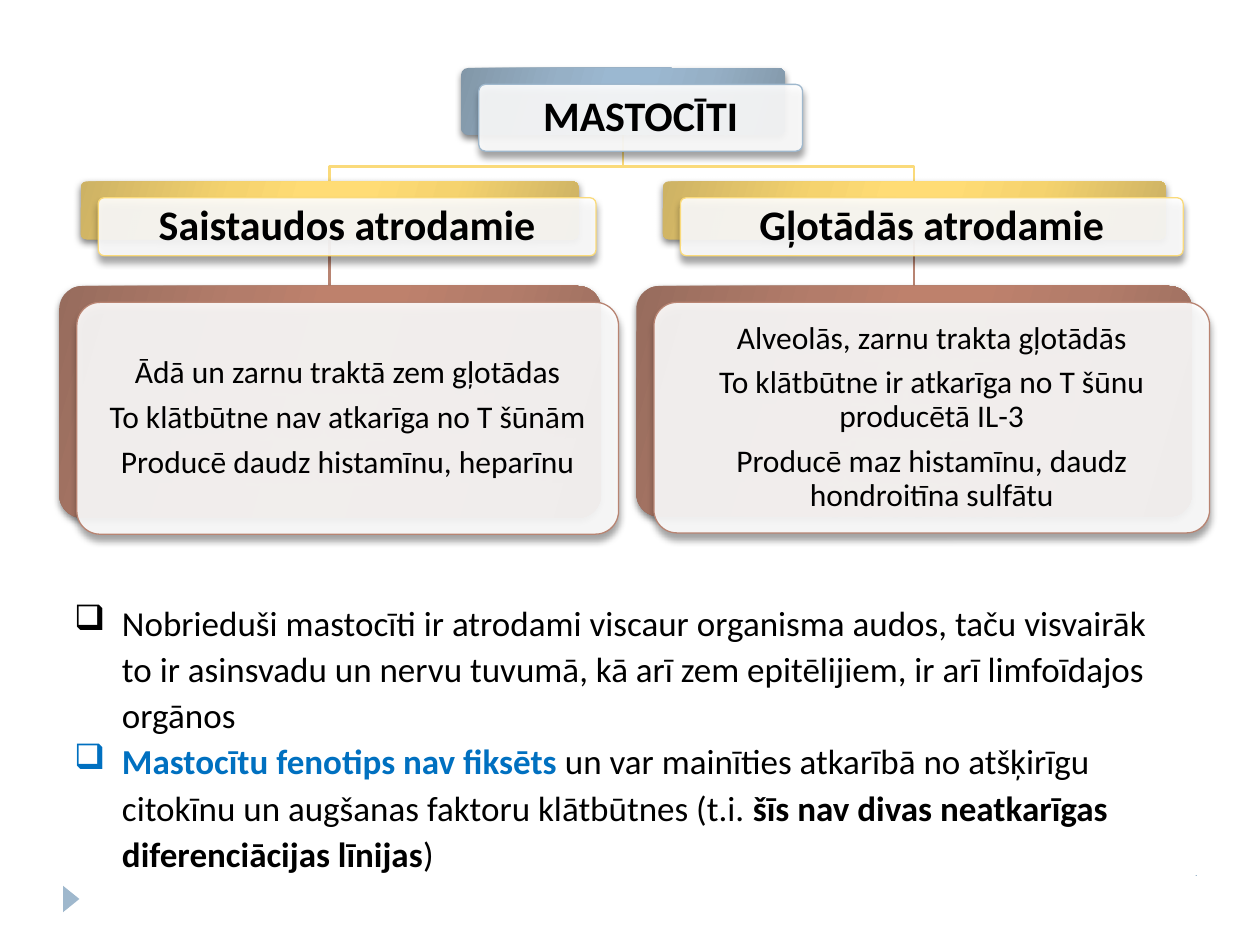
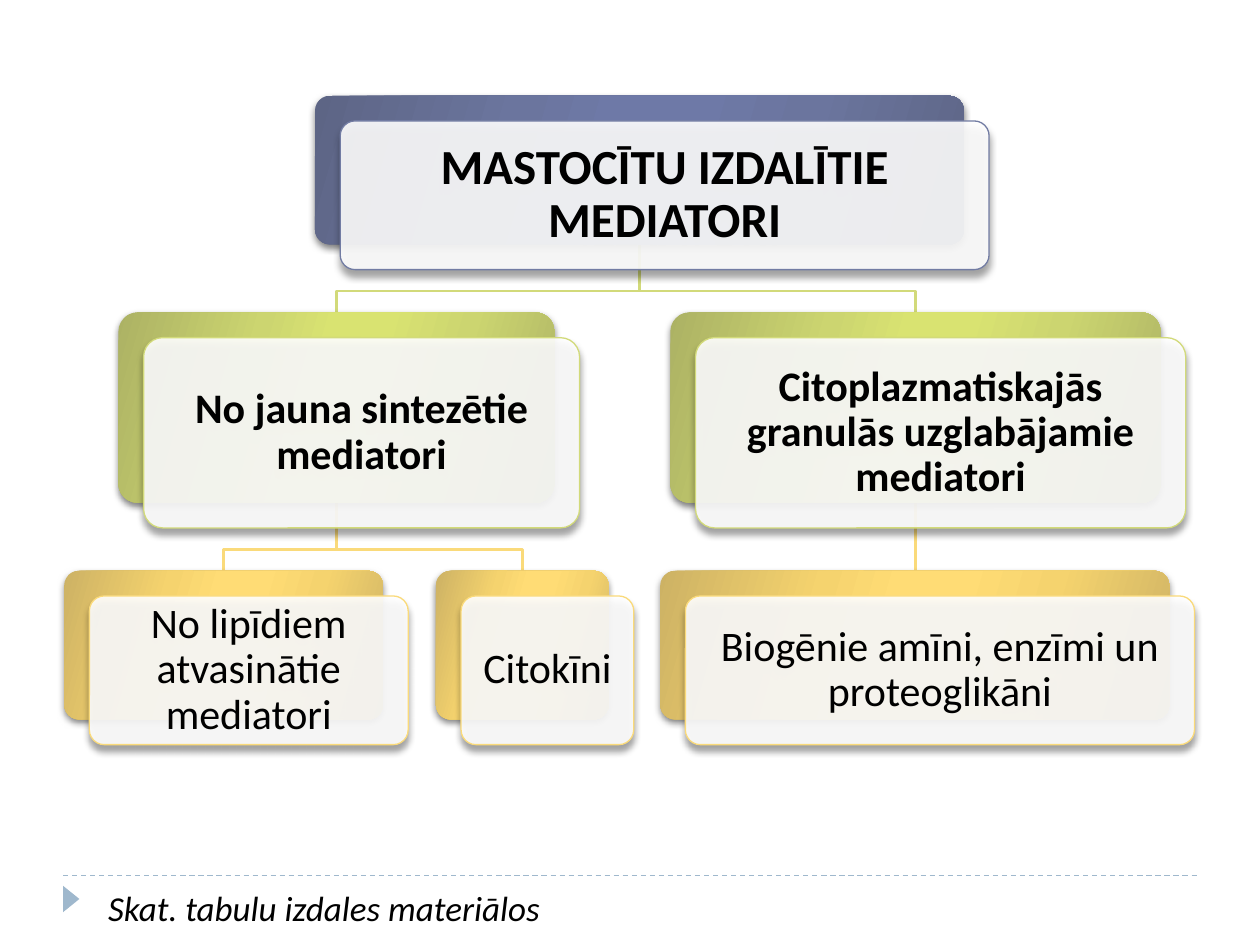
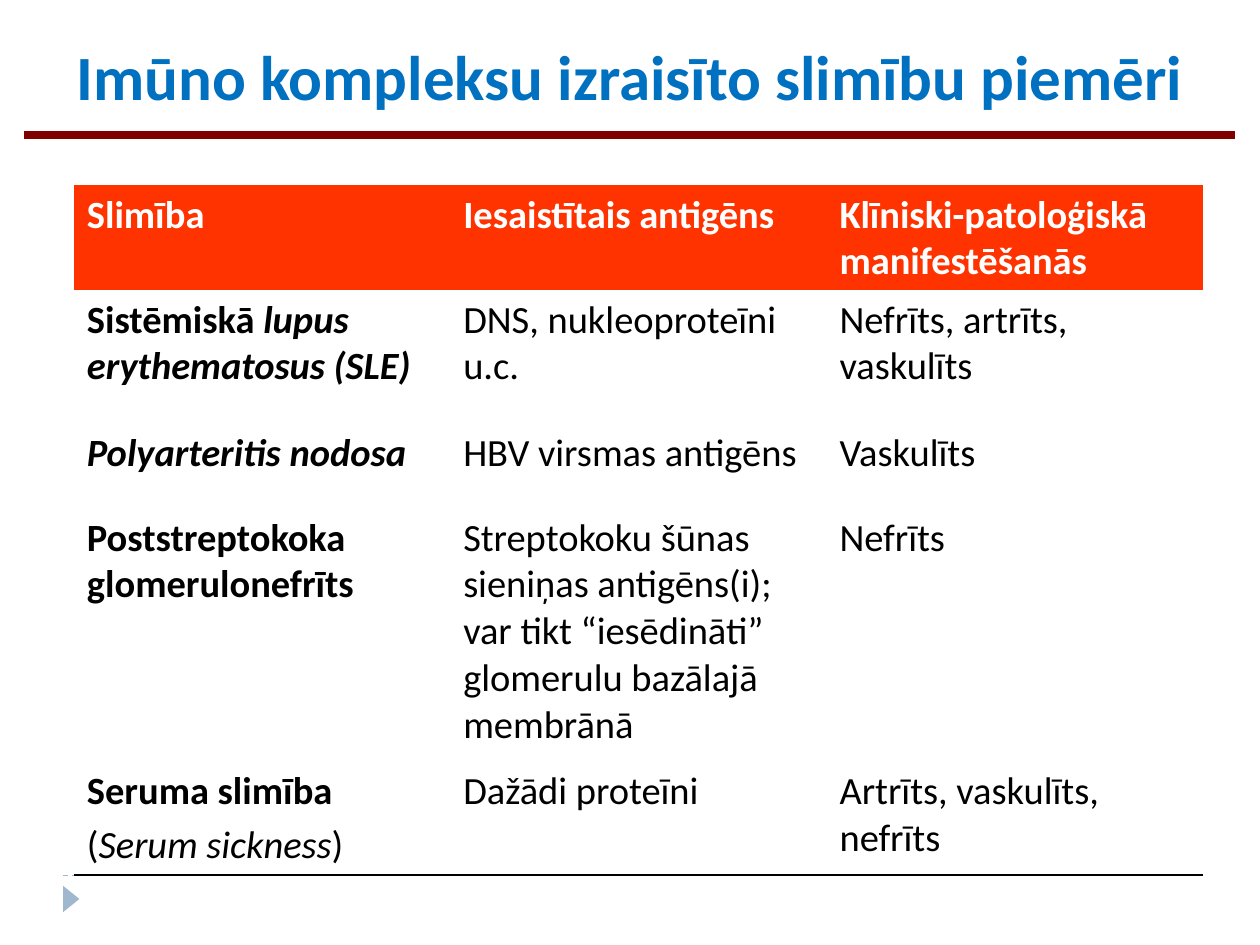
from collections import namedtuple

from lxml import etree
from pptx import Presentation
from pptx import util as u
from pptx.dml.color import RGBColor
from pptx.enum import dml, shapes, text
from pptx.oxml import ns

# Shared look
FONT = "Calibri"
BLACK = RGBColor(0x00, 0x00, 0x00)
WHITE = RGBColor(0xFF, 0xFF, 0xFF)
BLUE = RGBColor(0x00, 0x70, 0xC0)
FOOTER_BLUE = RGBColor(0x9F, 0xB8, 0xCD)
MAROON = RGBColor(0x80, 0x00, 0x00)
HEADER_RED = RGBColor(0xFF, 0x33, 0x00)
NO_GRID_STYLE = "{2D5ABB26-0587-4C30-8999-92F81FD0307C}"

# Card colours: outline, then gradient from the edge to the core
Palette = namedtuple("Palette", "line edge mid core")


def palette(*codes):
    return Palette(*map(RGBColor.from_string, codes))


STEEL = palette("9FB8CD", "8297A8", "96B0C6", "9BB8D1")
YELLOW = palette("FADA7A", "CDB264", "F5D36E", "FFDC75")
BROWN = palette("B88472", "976C5D", "B37C6A", "BE816C")
INDIGO = palette("727CA3", "5D6585", "6B759E", "6E79A7")
GREEN = palette("D2DA7A", "ACB264", "CCD570", "D9E371")

# A box of a tree; box is left, top, width, height of its back plate
Node = namedtuple("Node", "box palette size bold lines children", defaults=[()])
# Offset of the front plate, text inset, distance of the bend above a child
TreeStyle = namedtuple("TreeStyle", "dx dy inset bend")


def inches(*values):
    return [u.Inches(v) for v in values]


def sub(parent, tag, **attrs):
    return etree.SubElement(parent, ns.qn(tag), {k: str(v) for k, v in attrs.items()})


def add_color(parent, color, alpha=None):
    clr = sub(parent, "a:srgbClr", val=color)
    if alpha is not None:
        sub(clr, "a:alpha", val=alpha * 1000)


# Text
def write(tf, paras, size, color=BLACK, align=None, spacing=None, before=0, after=0):
    """Each paragraph is a list of (text, style[, colour]); style holds b and i."""
    tf.word_wrap = True
    for n, runs in enumerate(paras):
        p = tf.paragraphs[0] if n == 0 else tf.add_paragraph()
        p.alignment = align
        if spacing:
            p.line_spacing = spacing
        if before and n:
            p.space_before = u.Pt(before)
        if after:
            p.space_after = u.Pt(after)
        for content, style, *own_color in runs:
            r = p.add_run()
            r.text = content
            r.font.name, r.font.size = FONT, u.Pt(size)
            r.font.bold, r.font.italic = "b" in style, "i" in style
            r.font.color.rgb = own_color[0] if own_color else color


def add_text(s, box, paras, size, **options):
    tb = s.shapes.add_textbox(*inches(*box))
    write(tb.text_frame, paras, size, **options)
    return tb


def hang(p, left, hanging, bullet=None):
    pPr = p._p.get_or_add_pPr()
    pPr.set("marL", str(u.Inches(left)))
    pPr.set("indent", str(-u.Inches(hanging)))
    if bullet:
        sub(pPr, "a:buChar", char=bullet)


# Lines and shapes
def add_line(s, start, end, color, width, dash=None):
    line = s.shapes.add_connector(
        shapes.MSO_CONNECTOR.STRAIGHT, *inches(*start, *end))
    line.line.color.rgb, line.line.width = color, u.Pt(width)
    if dash:
        line.line.dash_style = dash
    sub(line._element.spPr, "a:effectLst")


def add_shape(s, kind, box, fill=None):
    sp = s.shapes.add_shape(kind, *inches(*box))
    sp.shadow.inherit = False
    sp.line.fill.background()
    if fill is not None:
        sp.fill.solid()
        sp.fill.fore_color.rgb = fill
    return sp


def add_footer(s):
    add_line(s, (0.5, 6.95), (9.5, 6.95), FOOTER_BLUE, 0.75, dml.MSO_LINE.DASH)
    marker = add_shape(s, shapes.MSO_SHAPE.ISOSCELES_TRIANGLE,
                       (0.46, 7.07, 0.21, 0.13), FOOTER_BLUE)
    marker.rotation = 90


# Tree of cards
def add_plate(s, box, shadow_alpha, shadow_dist, fill=None):
    sp = add_shape(s, shapes.MSO_SHAPE.ROUNDED_RECTANGLE, box, fill)
    sp.adjustments[0] = 0.1
    effects = sp._element.spPr.find(ns.qn("a:effectLst"))
    shadow = sub(effects, "a:outerShdw", blurRad=u.Pt(4), dist=u.Pt(shadow_dist),
                 dir=90 * 60000, rotWithShape=0)
    add_color(shadow, BLACK, shadow_alpha)
    return sp


def fill_gradient(sp, pal):
    sp.fill.gradient()
    grad = sp._element.spPr.find(ns.qn("a:gradFill"))
    for child in list(grad):
        grad.remove(child)
    stops = sub(grad, "a:gsLst")
    for pos, color in ((0, pal.edge), (30, pal.mid), (45, pal.core),
                       (55, pal.core), (73, pal.mid), (100, pal.edge)):
        add_color(sub(stops, "a:gs", pos=pos * 1000), color)
    sub(grad, "a:lin", ang=16 * 60000, scaled=0)


def add_card(s, node, style):
    left, top, width, height = node.box
    fill_gradient(add_plate(s, node.box, 50, 2), node.palette)

    front = add_plate(s, (left + style.dx, top + style.dy, width, height), 40, 3.4, WHITE)
    sub(front._element.spPr.find(".//" + ns.qn("a:srgbClr")), "a:alpha", val=90000)
    front.line.color.rgb, front.line.width = node.palette.line, u.Pt(0.75)

    tf = front.text_frame
    inset = u.Inches(style.inset if node.size > 18 else 0.07)
    tf.margin_left = tf.margin_right = tf.margin_top = tf.margin_bottom = inset
    tf.vertical_anchor = text.MSO_ANCHOR.MIDDLE
    write(tf, [[(line, "b" if node.bold else "")] for line in node.lines], node.size,
          align=text.PP_ALIGN.CENTER, spacing=0.9,
          after=6 if len(node.lines) > 1 else 0)


def add_link(s, parent, child, style):
    x1, y1 = parent.box[0] + parent.box[2] / 2, parent.box[1] + parent.box[3]
    x2, y2 = child.box[0] + child.box[2] / 2, child.box[1]
    color = child.palette.line
    if abs(x1 - x2) < 0.02:
        add_line(s, (x1, y1), (x1, y2), color, 1.5)
        return
    bend = y2 - style.bend
    builder = s.shapes.build_freeform(*inches(x1, y1))
    builder.add_line_segments(
        [inches(*pt) for pt in ((x1, bend), (x2, bend), (x2, y2))], close=False)
    sp = builder.convert_to_shape()
    sp.fill.background()
    sp.line.color.rgb, sp.line.width = color, u.Pt(1.5)
    sp.shadow.inherit = False


def walk(node):
    yield node
    for child in node.children:
        yield from walk(child)


def add_tree(s, root, style):
    for node in walk(root):
        for child in node.children:
            add_link(s, node, child, style)
    for node in walk(root):
        add_card(s, node, style)


# Table
def add_bottom_border(cell, color, width):
    tcPr = cell._tc.get_or_add_tcPr()
    ln = sub(tcPr, "a:lnB", w=u.Pt(width))
    add_color(sub(ln, "a:solidFill"), color)
    tcPr.insert(0, ln)


def add_disease_table(s, box, heights, rows):
    table = s.shapes.add_table(len(rows), len(rows[0]), *inches(*box)).table
    table.horz_banding = False
    table._tbl.tblPr.find(ns.qn("a:tableStyleId")).text = NO_GRID_STYLE
    for i, (height, row) in enumerate(zip(heights, rows)):
        table.rows[i].height = u.Inches(height)
        for cell, paras in zip(table.rows[i].cells, row):
            if i == 0:
                cell.fill.solid()
                cell.fill.fore_color.rgb = HEADER_RED
            else:
                cell.fill.background()
            if isinstance(paras, str):
                paras = [[(paras, "" if i else "b")]]
            write(cell.text_frame, paras, 22, color=BLACK if i else WHITE, before=4.4)
            if i == len(rows) - 1:
                add_bottom_border(cell, BLACK, 1)


# Slides
def new_slide(prs):
    s = prs.slides.add_slide(prs.slide_layouts[6])
    add_footer(s)
    return s


def mast_cell_slide(prs):
    s = new_slide(prs)
    notes = add_shape(s, shapes.MSO_SHAPE.RECTANGLE, (-0.01, 4.69, 9.5, 2.32), WHITE)
    notes.text_frame.vertical_anchor = text.MSO_ANCHOR.TOP
    write(notes.text_frame, [
        [("Nobrieduši mastocīti ir atrodami viscaur organisma audos, taču visvairāk to ir "
          "asinsvadu un nervu tuvumā, kā arī zem epitēlijiem, ir arī limfoīdajos orgānos", "")],
        [("Mastocītu fenotips nav fiksēts ", "b", BLUE),
         ("un var mainīties atkarībā no atšķirīgu citokīnu un augšanas faktoru "
          "klātbūtnes (t.i. ", ""),
         ("šīs nav divas neatkarīgas diferenciācijas līnijas", "b"),
         (")", "")],
    ], 20, align=text.PP_ALIGN.LEFT, spacing=1.1)
    for p in notes.text_frame.paragraphs:
        hang(p, 0.88, 0.38, "❑")

    connective = Node((0.47, 2.27, 4.3, 1.84), BROWN, 18, False, [
        "Ādā un zarnu traktā zem gļotādas",
        "To klātbūtne nav atkarīga no T šūnām",
        "Producē daudz histamīnu, heparīnu"])
    mucosal = Node((5.05, 2.27, 4.41, 1.83), BROWN, 18, False, [
        "Alveolās, zarnu trakta gļotādās",
        "To klātbūtne ir atkarīga no T šūnu producētā IL-3",
        "Producē maz histamīnu, daudz hondroitīna sulfātu"])
    root = Node((3.66, 0.54, 2.57, 0.53), STEEL, 24, True, ["MASTOCĪTI"], [
        Node((0.64, 1.44, 3.95, 0.46), YELLOW, 24, True,
             ["Saistaudos atrodamie"], [connective]),
        Node((5.26, 1.44, 3.99, 0.46), YELLOW, 24, True,
             ["Gļotādās atrodamie"], [mucosal])])
    add_tree(s, root, TreeStyle(0.14, 0.13, 0.1, 0.12))


def mediator_slide(prs):
    s = new_slide(prs)
    hint = add_text(s, (0.76, 6.95, 4.78, 0.47),
                    [[("Skat. tabulu izdales materiālos", "i")]], 20, spacing=1.1)
    hang(hint.text_frame.paragraphs[0], 0.5, 0.5)

    top, height = 4.53, 1.18
    lipids = Node((0.51, top, 2.53, height), YELLOW, 24, False,
                  ["No lipīdiem atvasinātie mediatori"])
    cytokines = Node((3.46, top, 1.37, height), YELLOW, 24, False, ["Citokīni"])
    amines = Node((5.24, top, 4.04, height), YELLOW, 24, False,
                  ["Biogēnie amīni, enzīmi un proteoglikāni"])
    root = Node((2.5, 0.76, 5.15, height), INDIGO, 28, True,
                ["MASTOCĪTU IZDALĪTIE MEDIATORI"], [
        Node((0.94, 2.48, 3.46, 1.51), GREEN, 24, True,
             ["No jauna sintezētie mediatori"], [lipids, cytokines]),
        Node((5.32, 2.48, 3.89, 1.51), GREEN, 24, True,
             ["Citoplazmatiskajās granulās uzglabājamie mediatori"], [amines])])
    add_tree(s, root, TreeStyle(0.2, 0.2, 0.1, 0.17))


def disease_slide(prs):
    s = new_slide(prs)
    add_text(s, (0, 0.25, 10, 0.71),
             [[("Imūno kompleksu izraisīto slimību piemēri", "b")]], 36,
             color=BLUE, align=text.PP_ALIGN.CENTER)
    add_line(s, (0.19, 1.07), (9.8, 1.07), MAROON, 4.5)
    add_disease_table(s, (0.59, 1.47, 8.96, 5.47), (0.83, 1.06, 0.67, 2.01, 0.9), [
        ["Slimība", "Iesaistītais antigēns", "Klīniski-patoloģiskā manifestēšanās"],
        [[[("Sistēmiskā ", "b"), ("lupus erythematosus (SLE)", "bi")]],
         "DNS, nukleoproteīni u.c.", "Nefrīts, artrīts, vaskulīts"],
        [[[("Polyarteritis nodosa", "bi")]], "HBV virsmas antigēns", "Vaskulīts"],
        [[[("Poststreptokoka glomerulonefrīts", "b")]],
         "Streptokoku šūnas sieniņas antigēns(i); var tikt “iesēdināti” "
         "glomerulu bazālajā membrānā", "Nefrīts"],
        [[[("Seruma slimība", "b")], [("(", ""), ("Serum sickness", "i"), (")", "")]],
         "Dažādi proteīni", "Artrīts, vaskulīts, nefrīts"],
    ])


def main():
    prs = Presentation()
    prs.slide_width, prs.slide_height = inches(10, 7.5)
    mast_cell_slide(prs)
    mediator_slide(prs)
    disease_slide(prs)
    prs.save("out.pptx")


if __name__ == "__main__":
    main()
